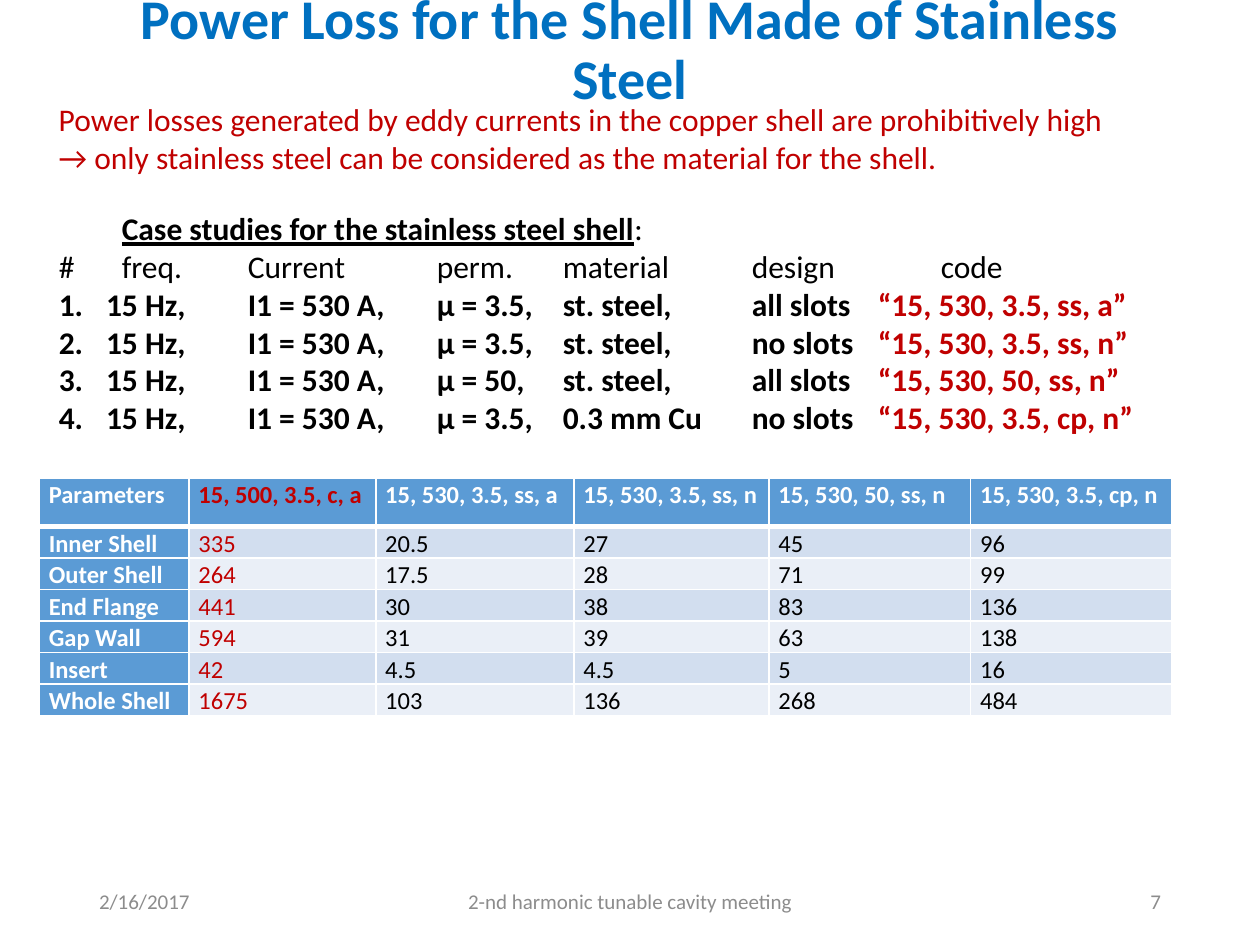
from lxml import etree
from pptx import Presentation
from pptx.dml.color import RGBColor
from pptx.enum import text as tx
from pptx.oxml import ns
from pptx.util import Pt

BLUE = RGBColor(0x00, 0x70, 0xC0)
RED = RGBColor(0xC0, 0x00, 0x00)
GREY = RGBColor(0x8C, 0x8C, 0x8C)
BLACK = RGBColor(0x00, 0x00, 0x00)
WHITE = RGBColor(0xFF, 0xFF, 0xFF)
HEAD = RGBColor(0x5B, 0x9B, 0xD5)
BANDS = RGBColor(0xEA, 0xEF, 0xF7), RGBColor(0xD2, 0xDE, 0xEF)


def style(run, size, color, bold=False):
    font = run.font
    font.name, font.size, font.bold = "Calibri", Pt(size), bold
    font.color.rgb = color


def add_box(left, top, width, height):
    frame = slide.shapes.add_textbox(Pt(left), Pt(top), Pt(width), Pt(height)).text_frame
    frame.word_wrap = True
    return frame


deck = Presentation()
deck.slide_width, deck.slide_height = Pt(720), Pt(540)
slide = deck.slides.add_slide(deck.slide_layouts[5])

# Title
title = slide.shapes.title
title.left, title.top, title.width, title.height = Pt(49.5), Pt(5), Pt(621), Pt(48.5)
frame = title.text_frame
frame.text = "Power Loss for the Shell Made of Stainless Steel"
frame.auto_size = tx.MSO_AUTO_SIZE.NONE
frame.vertical_anchor = tx.MSO_ANCHOR.MIDDLE
para = frame.paragraphs[0]
para.alignment, para.line_spacing = tx.PP_ALIGN.CENTER, 0.9
style(para.runs[0], 32, BLUE, True)

# Footer
for left, width, words, align in (
    (49.5, 162, "2/16/2017", tx.PP_ALIGN.LEFT),
    (238.5, 243, "2-nd harmonic tunable cavity meeting", tx.PP_ALIGN.CENTER),
    (508.5, 162, "7", tx.PP_ALIGN.RIGHT),
):
    frame = add_box(left, 500.5, width, 28.75)
    frame.text = words
    frame.vertical_anchor = tx.MSO_ANCHOR.MIDDLE
    frame.paragraphs[0].alignment = align
    style(frame.paragraphs[0].runs[0], 12, GREY)

# Opening statement
frame = add_box(26.5, 53.5, 620, 51)
frame.text = ("Power losses generated by eddy currents in the copper shell are prohibitively high "
              "\u2192 only stainless steel can be considered as the material for the shell.")
style(frame.paragraphs[0].runs[0], 18, RED)

# Case studies: each line is a list of (text, color, bold)
cases = [
    ("15 Hz, \tI1 = 530 A, \t\u00b5 = 3.5, \tst. steel, \t\tall slots \t", "15, 530, 3.5, ss, a"),
    ("15 Hz, \tI1 = 530 A, \t\u00b5 = 3.5, \tst. steel, \t\tno slots \t", "15, 530, 3.5, ss, n"),
    ("15 Hz, \tI1 = 530 A, \t\u00b5 = 50, \tst. steel, \t\tall slots \t", "15, 530, 50, ss, n"),
    ("15 Hz,\tI1 = 530 A, \t\u00b5 = 3.5, \t0.3 mm Cu\tno slots\t", "15, 530, 3.5, cp, n"),
]
lines = [
    [("\t", BLACK, False), ("Case studies for the stainless steel shell", BLACK, True),
     (":", BLACK, False)],
    [("#\tfreq.\t\tCurrent \t\tperm.\tmaterial \t\tdesign\t\tcode", BLACK, False)],
]
lines += [[(facts, BLACK, True), (f"\u201c{code}\u201d", RED, True)] for facts, code in cases]

frame = add_box(26.5, 116, 666, 138)
for num, line in enumerate(lines):
    para = frame.add_paragraph() if num else frame.paragraphs[0]
    for words, color, bold in line:
        run = para.add_run()
        run.text = words
        style(run, 18, color, bold)
    props = para._p.get_or_add_pPr()
    props.set("defTabSz", str(Pt(36)))
    if num > 1:
        props.set("marL", str(Pt(27)))
        props.set("indent", str(Pt(-27)))
        etree.SubElement(props, ns.qn("a:buFont"), typeface="+mj-lt")
        etree.SubElement(props, ns.qn("a:buAutoNum"), type="arabicPeriod")
frame.paragraphs[0].runs[1].font.underline = True

# Loss table
rows = [
    ("Parameters", "15, 500, 3.5, c, a") + tuple(code for _, code in cases),
    ("Inner Shell", "335", "20.5", "27", "45", "96"),
    ("Outer Shell", "264", "17.5", "28", "71", "99"),
    ("End Flange", "441", "30", "38", "83", "136"),
    ("Gap Wall", "594", "31", "39", "63", "138"),
    ("Insert", "42", "4.5", "4.5", "5", "16"),
    ("Whole Shell", "1675", "103", "136", "268", "484"),
]
widths = [85.5, 106.75, 113.25, 111.5, 115.25, 115]
table = slide.shapes.add_table(len(rows), len(widths), Pt(22.5), Pt(273), Pt(647.25), Pt(131)).table
for col, width in zip(table.columns, widths):
    col.width = Pt(width)
for r, row in enumerate(rows):
    table.rows[r].height = Pt(13.5 if r else 28)
    for c, words in enumerate(row):
        cell = table.cell(r, c)
        cell.margin_left = cell.margin_right = Pt(5.4)
        cell.margin_top = cell.margin_bottom = 0
        cell.text = words
        para = cell.text_frame.paragraphs[0]
        para.line_spacing = 1.07
        label = r == 0 or c == 0
        color = RED if c == 1 else WHITE if label else BLACK
        style(para.runs[0], 14, color, label)
        # White rules, thicker below the header
        props = cell._tc.get_or_add_tcPr()
        for side in "LRTB":
            thick = (r, side) in ((0, "B"), (1, "T"))
            rule = etree.SubElement(props, ns.qn(f"a:ln{side}"), w=str(Pt(3 if thick else 1)))
            fill = etree.SubElement(rule, ns.qn("a:solidFill"))
            etree.SubElement(fill, ns.qn("a:srgbClr"), val=str(WHITE))
        cell.fill.solid()
        cell.fill.fore_color.rgb = HEAD if label else BANDS[r % 2]

deck.save("out.pptx")
